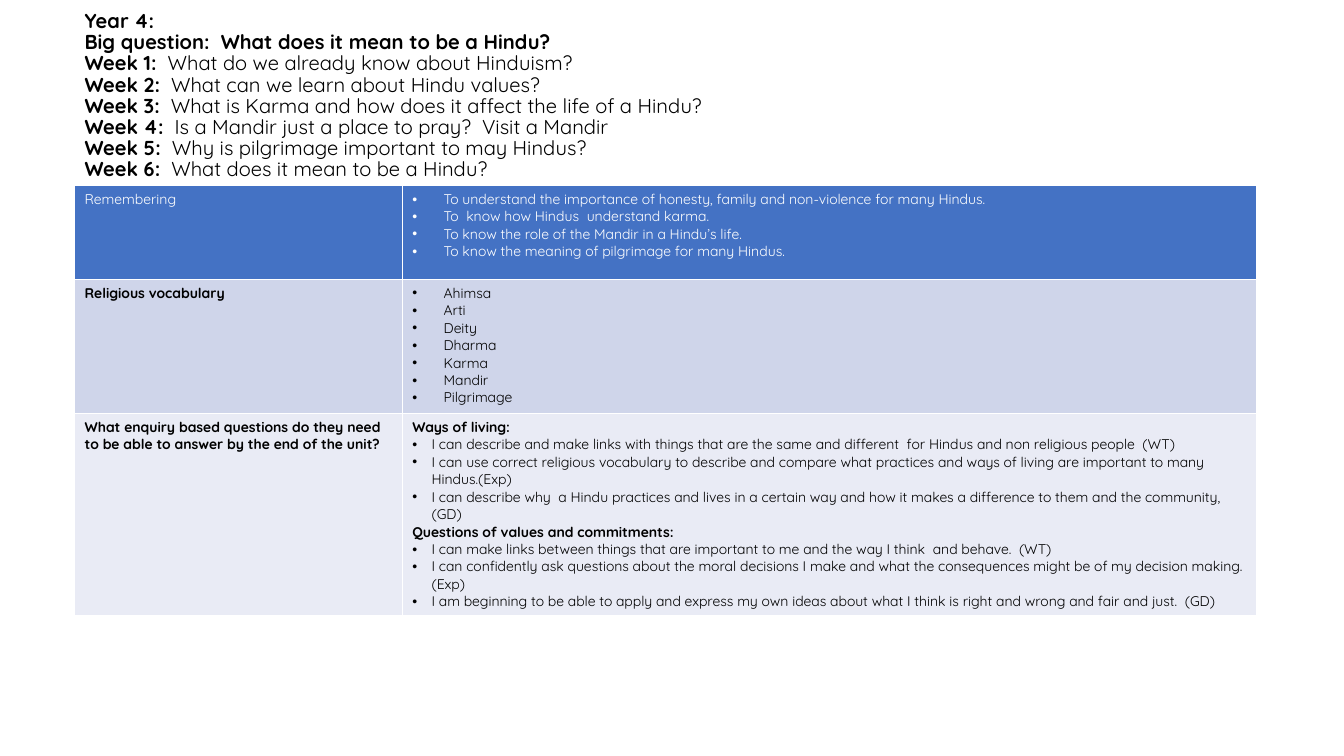
"""Build the Year 4 Hinduism unit overview slide."""
from lxml.etree import SubElement
from pptx import Presentation
from pptx.dml.color import RGBColor
from pptx.enum.text import MSO_ANCHOR, MSO_AUTO_SIZE
from pptx.oxml.ns import qn
from pptx.util import Inches, Pt

HEADING = [
    ("Year 4:", ""),
    ("Big question:  What does it mean to be a Hindu?", ""),
    ("Week 1:", "  What do we already know about Hinduism?"),
    ("Week 2:", "  What can we learn about Hindu values?"),
    ("Week 3:", "  What is Karma and how does it affect the life of a Hindu?"),
    ("Week 4:", "  Is a Mandir just a place to pray?  Visit a Mandir"),
    ("Week 5:", "  Why is pilgrimage important to may Hindus?"),
    ("Week 6:", "  What does it mean to be a Hindu?"),
]
AIMS = [
    "To understand the importance of honesty, family and non-violence for many Hindus.",
    "To  know how Hindus  understand karma.",
    "To know the role of the Mandir in a Hindu’s life.",
    "To know the meaning of pilgrimage for many Hindus.",
]
WORDS = ["Ahimsa", "Arti", "Deity", "Dharma", "Karma", "Mandir", "Pilgrimage"]
LIVING = [
    "I can describe and make links with things that are the same and different  for Hindus and non religious people  (WT)",
    "I can use correct religious vocabulary to describe and compare what practices and ways of living are important to many Hindus.(Exp)",
    "I can describe why  a Hindu practices and lives in a certain way and how it makes a difference to them and the community, (GD)",
]
VALUES = [
    "I can make links between things that are important to me and the way I think  and behave.  (WT)",
    "I can confidently ask questions about the moral decisions I make and what the consequences might be of my decision making.  (Exp)",
    "I am beginning to be able to apply and express my own ideas about what I think is right and wrong and fair and just.  (GD)",
]
ROWS = [
    {"label": "Remembering", "groups": [("", AIMS)], "indent": 0.31,
     "height": 0.93, "fill": "blue", "ink": "white", "bold": False},
    {"label": "Religious vocabulary", "groups": [("", WORDS)], "indent": 0.31,
     "height": 1.33, "fill": "mid", "ink": "black", "bold": True},
    {"label": "What enquiry based questions do they need to be able to answer by the end of the unit?",
     "groups": [("Ways of living:", LIVING), ("Questions of values and commitments:", VALUES)],
     "indent": 0.19, "height": 1.99, "fill": "pale", "ink": "black", "bold": True},
]
COLS = [3.25, 8.47]
LEFT, TOP = 0.74, 1.84
THEME = {"font": "Quicksand", "head": 14.4, "body": 10, "black": "000000",
         "white": "FFFFFF", "blue": "4472C4", "mid": "CFD5EA", "pale": "E9EBF5"}


def color(name):
    return RGBColor.from_string(THEME[name])


def style(run, size, ink, bold):
    font = run.font
    font.name, font.size, font.bold = THEME["font"], Pt(THEME[size]), bold
    font.color.rgb = color(ink)


def bullet(para, indent):
    props = para._p.get_or_add_pPr()
    props.set("marL", str(Inches(indent)))
    props.set("indent", str(-Inches(indent)))
    SubElement(props, qn("a:buFont")).set("typeface", "Arial")
    SubElement(props, qn("a:buChar")).set("char", "•")


def fill_cell(cell, row, lines):
    cell.fill.solid()
    cell.fill.fore_color.rgb = color(row["fill"])
    cell.text_frame.text = "\n".join(text for text, _, _ in lines)
    for para, (_, bold, dot) in zip(cell.text_frame.paragraphs, lines):
        style(para.runs[0], "body", row["ink"], bold)
        if dot:
            bullet(para, row["indent"])


def add_heading(slide):
    box = slide.shapes.add_textbox(Inches(LEFT), Inches(0.45), Inches(10.11), Inches(1.39))
    frame = box.text_frame
    frame.word_wrap = True
    frame.auto_size = MSO_AUTO_SIZE.NONE
    frame.vertical_anchor = MSO_ANCHOR.BOTTOM
    frame.text = "\n".join(label for label, _ in HEADING)
    for para, (_, rest) in zip(frame.paragraphs, HEADING):
        para.line_spacing = 0.87
        style(para.runs[0], "head", "black", True)
        if rest:
            run = para.add_run()
            run.text = rest
            style(run, "head", "black", False)


def add_plan(slide):
    high = sum(row["height"] for row in ROWS)
    table = slide.shapes.add_table(len(ROWS), len(COLS), Inches(LEFT), Inches(TOP),
                                   Inches(sum(COLS)), Inches(high)).table
    for col, width in zip(table.columns, COLS):
        col.width = Inches(width)
    for i, row in enumerate(ROWS):
        table.rows[i].height = Inches(row["height"])
        fill_cell(table.cell(i, 0), row, [(row["label"], row["bold"], False)])
        lines = []
        for title, items in row["groups"]:
            if title:
                lines.append((title, True, False))
            lines += [(item, False, True) for item in items]
        fill_cell(table.cell(i, 1), row, lines)


def main():
    deck = Presentation()
    deck.slide_width, deck.slide_height = Inches(13.33), Inches(7.5)
    slide = deck.slides.add_slide(deck.slide_layouts[6])
    add_heading(slide)
    add_plan(slide)
    deck.save("out.pptx")


if __name__ == "__main__":
    main()
